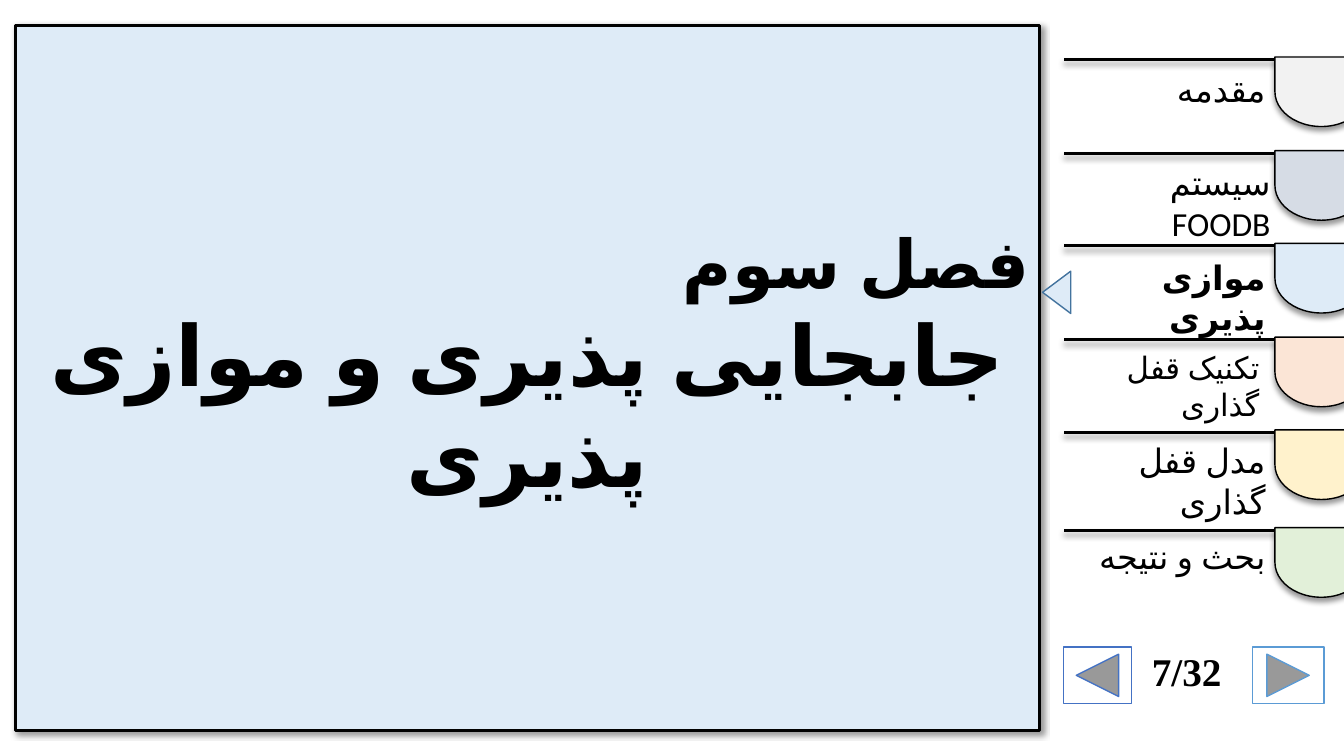
from lxml.etree import SubElement
from pptx import Presentation
from pptx.dml.color import RGBColor
from pptx.enum.shapes import MSO_CONNECTOR, MSO_SHAPE as SHAPE
from pptx.enum.text import MSO_ANCHOR, MSO_AUTO_SIZE as FIT, PP_ALIGN as ALIGN
from pptx.oxml.ns import qn
from pptx.util import Inches, Pt

BLACK = RGBColor(0x00, 0x00, 0x00)
WHITE = RGBColor(0xFF, 0xFF, 0xFF)
GRAY = RGBColor(0xF2, 0xF2, 0xF2)
SLATE = RGBColor(0xD6, 0xDC, 0xE5)
SKY = RGBColor(0xDE, 0xEB, 0xF7)
PEACH = RGBColor(0xFB, 0xE5, 0xD6)
CREAM = RGBColor(0xFF, 0xF2, 0xCC)
MINT = RGBColor(0xE2, 0xF0, 0xD9)
BACK_BLUE = RGBColor(0x44, 0x72, 0xC4)
NEXT_BLUE = RGBColor(0x5B, 0x9B, 0xD5)
MARKER_BLUE = RGBColor(0x43, 0x73, 0x9E)

MENU_LEFT, SLIDE_WIDTH = 10.55, 13.33
SECTIONS = [
    ("مقدمه", 0.59, GRAY, (10.93, 0.63, 1.72, 0.5), {}),
    ("سیستم FOODB", 1.52, SLATE, (10.5, 1.56, 2.2, 0.5), {}),
    ("موازی پذیری", 2.44, SKY, (10.72, 2.5, 1.93, 0.5), {"bold": True}),
    ("تکنیک قفل گذاری", 3.37, PEACH, (10.62, 3.41, 1.97, 0.47), {"size": Pt(22)}),
    ("مدل قفل گذاری", 4.29, CREAM, (10.44, 4.32, 2.21, 0.5), {}),
    ("بحث و نتیجه", 5.26, MINT, (10.62, 5.27, 2.03, 0.5), {}),
]
BUTTONS = [
    (SHAPE.ACTION_BUTTON_BACK_OR_PREVIOUS, (MENU_LEFT, 6.42, 0.67, 0.56), BACK_BLUE),
    (SHAPE.ACTION_BUTTON_FORWARD_OR_NEXT, (12.42, 6.42, 0.71, 0.56), NEXT_BLUE),
]


def apply(target, values):
    """Set each named attribute on the target."""
    for name, value in values.items():
        setattr(target, name, value)


def inches(box):
    """Convert a box of numbers to lengths."""
    return [Inches(value) for value in box]


def set_effects(item, direction=None):
    """Replace the theme effects with none, or with a soft shadow."""
    effects = SubElement(item._element.spPr, qn("a:effectLst"))
    if direction is not None:
        shadow = SubElement(effects, qn("a:outerShdw"), blurRad=str(Pt(4)), dist=str(Pt(3)),
                            dir=str(direction * 60000), algn="t", rotWithShape="0")
        color = SubElement(shadow, qn("a:srgbClr"), val=str(BLACK))
        SubElement(color, qn("a:alpha"), val="40000")


def paint(item, fill, outline, width=1):
    """Fill and outline a shape."""
    item.fill.solid()
    item.fill.fore_color.rgb = fill
    item.line.color.rgb = outline
    item.line.width = Pt(width)


def add_figure(slide, kind, box, fill, outline, rotation=0, direction=None):
    """Add a painted preset shape."""
    figure = slide.shapes.add_shape(kind, *inches(box))
    figure.rotation = rotation
    paint(figure, fill, outline)
    set_effects(figure, direction)


def write(paragraph, wording, align, rtl=True, **font):
    """Write one formatted paragraph."""
    paragraph.alignment = align
    run = paragraph.add_run()
    run.text = wording
    apply(run.font, {"name": "Calibri", "size": Pt(24), "bold": False, **font})
    run.font.color.rgb = BLACK
    if rtl:
        paragraph._p.get_or_add_pPr().set("rtl", "1")
        run._r.get_or_add_rPr().set("lang", "fa-IR")


def add_label(slide, box, wording, align, **style):
    """Add a wrapping text box with one paragraph."""
    frame = slide.shapes.add_textbox(*inches(box)).text_frame
    apply(frame, {"word_wrap": True, "auto_size": FIT.SHAPE_TO_FIT_TEXT})
    write(frame.paragraphs[0], wording, align, **style)


def add_section(slide, wording, top, color, box, style):
    """Add a menu entry with its rule, tab and label."""
    rule = slide.shapes.add_connector(
        MSO_CONNECTOR.STRAIGHT, *inches((SLIDE_WIDTH, top, MENU_LEFT, top)))
    rule.line.color.rgb = BLACK
    rule.line.width = Pt(2.25)
    set_effects(rule, 90)
    add_figure(slide, SHAPE.FLOWCHART_DELAY, (12.76, top - 0.14, 0.69, 0.92),
               color, BLACK, 90, 90)
    add_label(slide, box, wording, ALIGN.RIGHT, **style)


def format_title(title):
    """Turn the title into the chapter panel."""
    apply(title, dict(zip(("left", "top", "width", "height"),
                          inches((0.15, 0.25, 10.16, 7)))))
    paint(title, SKY, BLACK, 2.25)
    set_effects(title, 45)
    frame = title.text_frame
    apply(frame, {"word_wrap": True, "auto_size": FIT.NONE,
                  "vertical_anchor": MSO_ANCHOR.MIDDLE, "margin_bottom": Inches(0.35)})
    write(frame.paragraphs[0], "فصل سوم", ALIGN.RIGHT, size=Pt(48), bold=True)
    write(frame.add_paragraph(), "جابجایی پذیری و موازی پذیری", ALIGN.CENTER,
          size=Pt(60), bold=True)


def main():
    """Build and save the chapter slide."""
    deck = Presentation()
    apply(deck, {"slide_width": Inches(SLIDE_WIDTH), "slide_height": Inches(7.5)})
    slide = deck.slides.add_slide(deck.slide_layouts[5])
    format_title(slide.shapes.title)
    for section in SECTIONS:
        add_section(slide, *section)
    for kind, box, outline in BUTTONS:
        add_figure(slide, kind, box, WHITE, outline)
    add_label(slide, (11.22, 6.37, 1.1, 0.57), "7/32", ALIGN.CENTER, rtl=False,
              name="Times New Roman", size=Pt(28), bold=True)
    add_figure(slide, SHAPE.ISOSCELES_TRIANGLE, (10.27, 2.76, 0.42, 0.28),
               SKY, MARKER_BLUE, 270)
    deck.save("out.pptx")


if __name__ == "__main__":
    main()
